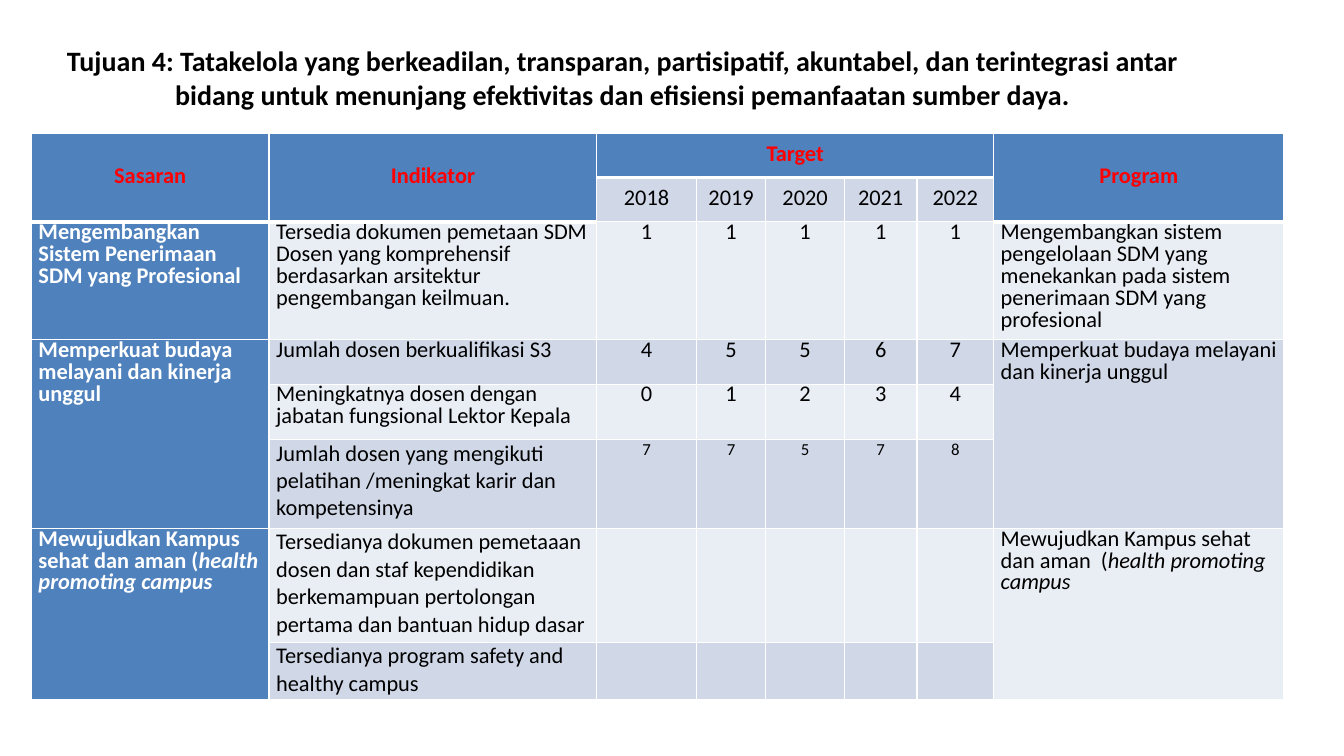
import pptx
import pptx.util
import pptx.dml.color
import pptx.enum.text
import pptx.oxml
import pptx.oxml.ns

Cm, Pt = pptx.util.Cm, pptx.util.Pt
ALIGN, ANCHOR = pptx.enum.text.PP_ALIGN, pptx.enum.text.MSO_ANCHOR

FONT = "Calibri"
BLUE, DARK_BAND, LIGHT_BAND = "4F81BD", "D0D8E8", "E9EDF4"
BLACK, WHITE, RED = "000000", "FFFFFF", "FF0000"

TITLE = ("Tujuan 4: Tatakelola yang berkeadilan, transparan, partisipatif, "
         "akuntabel, dan terintegrasi antar bidang untuk menunjang efektivitas "
         "dan efisiensi pemanfaatan sumber daya.")

COL_WIDTHS = [5.99, 8.26, 2.51, 1.75, 1.98, 1.83, 1.93, 7.32]
ROW_HEIGHTS = [1.12, 1.12, 2.97, 1.12, 1.4, 2.24, 2.87, 1.45]
TARGET_COLS = range(2, 7)
PROGRAM_COL = 7
HEADERS = {0: "Sasaran", 1: "Indikator", 2: "Target", PROGRAM_COL: "Program"}
YEARS = range(2018, 2023)

# First row, row count, sasaran and program; each text is (plain, italic)
GOALS = [
    (2, 1, ("Mengembangkan Sistem Penerimaan SDM yang Profesional", ""),
     ("Mengembangkan sistem pengelolaan SDM yang menekankan pada sistem "
      "penerimaan SDM yang profesional", "")),
    (3, 3, ("Memperkuat budaya melayani dan kinerja unggul", ""),
     ("Memperkuat budaya melayani dan kinerja unggul", "")),
    (6, 2, ("Mewujudkan Kampus sehat dan aman (", "health promoting campus"),
     ("Mewujudkan Kampus sehat dan aman  (", "health promoting campus")),
]

# Indikator, yearly targets, line spacing, size of the targets
INDICATORS = [
    ("Tersedia dokumen pemetaan SDM Dosen yang komprehensif berdasarkan "
     "arsitektur pengembangan keilmuan.", [1, 1, 1, 1, 1], 0.8, 16),
    ("Jumlah dosen berkualifikasi S3", [4, 5, 5, 6, 7], 0.8, 16),
    ("Meningkatnya dosen dengan jabatan fungsional Lektor Kepala",
     [0, 1, 2, 3, 4], 0.8, 16),
    ("Jumlah dosen yang mengikuti pelatihan /meningkat karir dan kompetensinya",
     [7, 7, 5, 7, 8], 1.0, 12),
    ("Tersedianya dokumen pemetaaan dosen dan staf kependidikan berkemampuan "
     "pertolongan pertama dan bantuan hidup dasar", [], 1.0, 16),
    ("Tersedianya program safety and healthy campus", [], 1.0, 16),
]


def rgb(value):
    return pptx.dml.color.RGBColor.from_string(value)


def add_run(p, text, size, color, bold=False, italic=False):
    r = p.add_run()
    r.text = text
    f = r.font
    f.name, f.size, f.bold, f.italic = FONT, Pt(size), bold, italic
    f.color.rgb = rgb(color)


def write_cell(cell, plain, italic="", size=16, color=BLACK, bold=False,
               align=ALIGN.LEFT, spacing=0.8, anchor=ANCHOR.TOP):
    cell.vertical_anchor = anchor
    p = cell.text_frame.paragraphs[0]
    p.alignment, p.line_spacing = align, spacing
    add_run(p, plain, size, color, bold)
    if italic:
        add_run(p, italic, size, color, bold, True)


def add_borders(cell, top, bottom):
    tcPr = cell._tc.get_or_add_tcPr()
    for side, width in (("L", 1), ("R", 1), ("T", top), ("B", bottom)):
        tcPr.append(pptx.oxml.parse_xml(
            f'<a:ln{side} {pptx.oxml.ns.nsdecls("a")} w="{Pt(width)}">'
            f'<a:solidFill><a:srgbClr val="{WHITE}"/></a:solidFill></a:ln{side}>'))


def style_grid(table):
    for r in range(len(ROW_HEIGHTS)):
        for c in range(len(COL_WIDTHS)):
            cell = table.cell(r, c)
            cell.margin_left = cell.margin_right = Cm(0.18)
            cell.margin_top = cell.margin_bottom = 0
            # The header ends one row higher above the years
            header_end = 0 if c in TARGET_COLS else 1
            add_borders(cell, 3 if r == header_end + 1 else 1,
                        3 if r <= header_end else 1)
            cell.fill.solid()
            band = DARK_BAND if r % 2 else LIGHT_BAND
            cell.fill.fore_color.rgb = rgb(
                BLUE if c == 0 or r <= header_end else band)


def add_title(s, left, top, width, height):
    sp = s.shapes.title
    sp.left, sp.top, sp.width, sp.height = left, top, width, height
    tf = sp.text_frame
    tf.word_wrap = True
    tf.auto_size = pptx.enum.text.MSO_AUTO_SIZE.NONE
    tf.vertical_anchor = ANCHOR.MIDDLE
    p = tf.paragraphs[0]
    p.alignment = ALIGN.CENTER
    add_run(p, TITLE, 20, BLACK, True)


def add_target_table(s, left, top):
    table = s.shapes.add_table(
        len(ROW_HEIGHTS), len(COL_WIDTHS), left, top,
        Cm(sum(COL_WIDTHS)), Cm(sum(ROW_HEIGHTS))).table
    table.first_row = table.horz_banding = False
    for col, width in zip(table.columns, COL_WIDTHS):
        col.width = Cm(width)
    for row, height in zip(table.rows, ROW_HEIGHTS):
        row.height = Cm(height)
    style_grid(table)

    # Header
    for c, text in HEADERS.items():
        end = (0, TARGET_COLS[-1]) if c in TARGET_COLS else (1, c)
        table.cell(0, c).merge(table.cell(*end))
        write_cell(table.cell(0, c), text, color=RED, bold=True,
                   align=ALIGN.CENTER, anchor=ANCHOR.MIDDLE)
    for c, year in zip(TARGET_COLS, YEARS):
        write_cell(table.cell(1, c), str(year), align=ALIGN.CENTER,
                   spacing=0.7, anchor=ANCHOR.MIDDLE)

    # Goals and programs
    for first, count, goal, program in GOALS:
        for c in (0, PROGRAM_COL):
            if count > 1:
                table.cell(first, c).merge(table.cell(first + count - 1, c))
        write_cell(table.cell(first, 0), *goal, color=WHITE, bold=True)
        write_cell(table.cell(first, PROGRAM_COL), *program)

    # Indicators and yearly targets
    for r, (text, targets, spacing, size) in enumerate(INDICATORS, start=2):
        write_cell(table.cell(r, 1), text, spacing=spacing)
        for c, value in zip(TARGET_COLS, targets):
            write_cell(table.cell(r, c), str(value), size=size,
                       align=ALIGN.CENTER, spacing=spacing)


def main():
    prs = pptx.Presentation()
    prs.slide_width, prs.slide_height = Cm(33.87), Cm(19.05)
    s = prs.slides.add_slide(prs.slide_layouts[5])
    add_title(s, Cm(1.35), Cm(0.76), Cm(28.68), Cm(2.36))
    add_target_table(s, Cm(0.79), Cm(3.35))
    prs.save("out.pptx")


if __name__ == "__main__":
    main()
